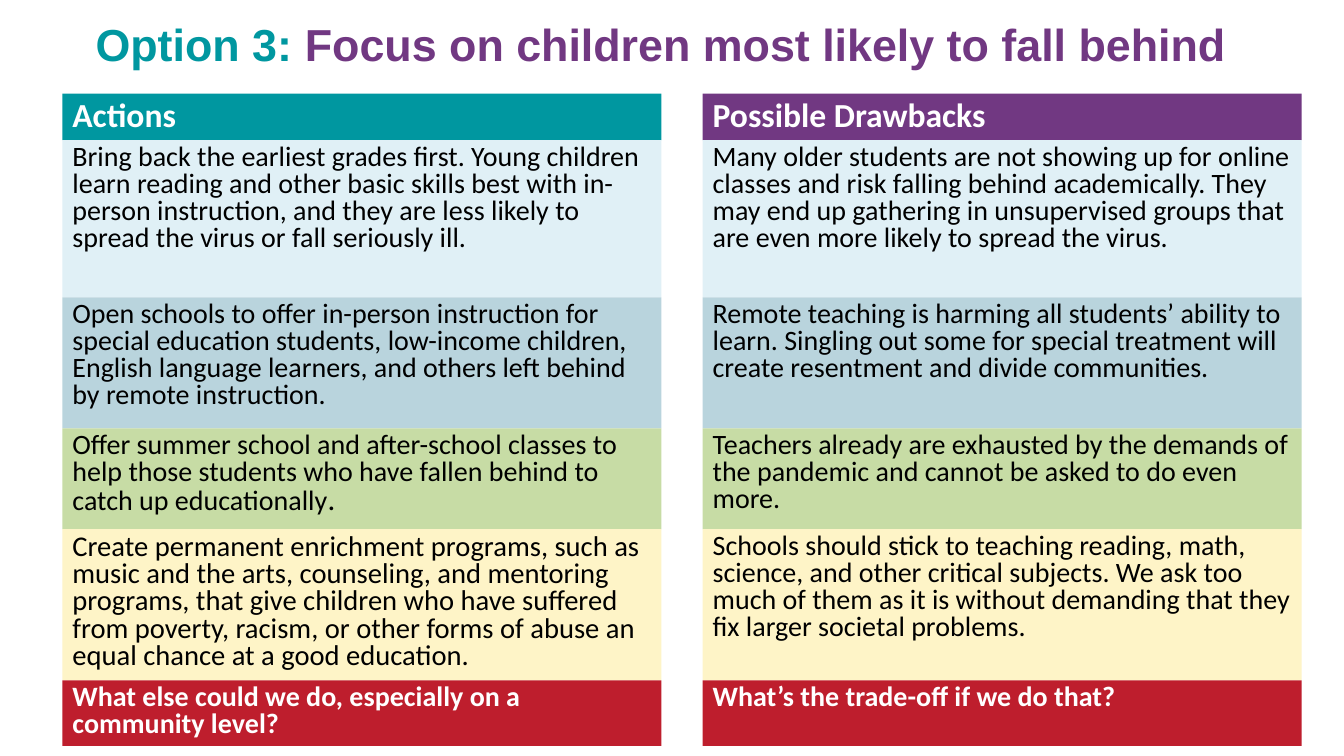
from pptx import Presentation
from pptx.dml.color import RGBColor
from pptx.enum.shapes import MSO_SHAPE as SHAPE
from pptx.enum.text import MSO_ANCHOR as ANCHOR, PP_ALIGN as ALIGN
from pptx.util import Inches, Pt

TEAL, PURPLE, BLACK, WHITE = "0097A0", "713882", "000000", "FFFFFF"
ROW_FILLS = ["E0F0F6", "B9D4DD", "C7DCA5", "FEF4C7", "BE1E2D"]
ROW_HEIGHTS = [1.56, 1.3, 1, 1.5, 0.65]
HEADER_HEIGHT = 0.46
COL_WIDTH, COL_GAP = 5.94, 0.41
LEFT, TOP = 0.62, 0.93

# Each column: heading, heading fill, then one list of (text, size) runs per row
COLUMNS = [
    ("Actions", TEAL, [
        [("Bring back the earliest grades first. Young children learn reading and "
          "other basic skills best with in-person instruction, and they are less "
          "likely to spread the virus or fall seriously ill.", 20)],
        [("Open schools to offer in-person instruction for special education "
          "students, low-income children, English language learners, and others "
          "left behind by remote instruction.", 20)],
        [("Offer summer school and after-school classes to help those students "
          "who have fallen behind to catch up educationally", 20), (".", 22)],
        [("Create permanent enrichment programs, such as music and the arts, "
          "counseling, and mentoring programs, that give children who have "
          "suffered from poverty, racism, or other forms of abuse an equal "
          "chance at a good education.", 20.4)],
        [("What else could we do, especially on a community level?", 20)],
    ]),
    ("Possible Drawbacks", PURPLE, [
        [("Many older students are not showing up for online classes and risk "
          "falling behind academically. They may end up gathering in unsupervised "
          "groups that are even more likely to spread the virus.", 20)],
        [("Remote teaching is harming all students’ ability to learn. Singling out "
          "some for special treatment will create resentment and divide "
          "communities.", 20)],
        [("Teachers already are exhausted by the demands of the pandemic and "
          "cannot be asked to do even more.", 20)],
        [("Schools should stick to teaching reading, math, science, and other "
          "critical subjects. We ask too much of them as it is without demanding "
          "that they fix larger societal problems.", 20)],
        [("What’s the trade-off if we do that?", 20)],
    ]),
]


def color(value):
    return RGBColor.from_string(value)


def add_run(p, text, size, font, hue, bold):
    r = p.add_run()
    r.text = text
    r.font.size, r.font.name, r.font.bold = Pt(size), font, bold
    r.font.color.rgb = color(hue)


def add_title(s, x, y, w, h):
    tf = s.shapes.add_textbox(*map(Inches, (x, y, w, h))).text_frame
    tf.word_wrap = True
    tf.vertical_anchor = ANCHOR.MIDDLE
    p = tf.paragraphs[0]
    p.alignment, p.line_spacing = ALIGN.CENTER, 0.9
    add_run(p, "Option 3: ", 32, "Arial", TEAL, True)
    add_run(p, "Focus on children most likely to fall behind", 32, "Arial", PURPLE, True)


def add_cell(s, x, y, w, h, fill, runs, hue=BLACK, bold=False,
             anchor=ANCHOR.TOP, spacing=0.8):
    sp = s.shapes.add_shape(SHAPE.RECTANGLE, *map(Inches, (x, y, w, h)))
    sp.shadow.inherit = False
    sp.fill.solid()
    sp.fill.fore_color.rgb = color(fill)
    sp.line.fill.background()
    tf = sp.text_frame
    tf.word_wrap = True
    tf.vertical_anchor = anchor
    p = tf.paragraphs[0]
    p.alignment, p.line_spacing = ALIGN.LEFT, spacing
    for text, size in runs:
        add_run(p, text, size, "Calibri", hue, bold)


def add_column(s, x, y, w, heading, fill, rows):
    add_cell(s, x, y, w, HEADER_HEIGHT, fill, [(heading, 24)], WHITE, True,
             ANCHOR.BOTTOM, 0.9)
    y += HEADER_HEIGHT
    for runs, row_fill, h in zip(rows, ROW_FILLS, ROW_HEIGHTS):
        closing = row_fill == ROW_FILLS[-1]
        add_cell(s, x, y, w, h, row_fill, runs, WHITE if closing else BLACK, closing)
        y += h


def main():
    prs = Presentation()
    prs.slide_width, prs.slide_height = Inches(13.33), Inches(7.5)
    s = prs.slides.add_slide(prs.slide_layouts[6])
    add_title(s, 0.81, 0.12, 11.5, 0.7)
    # Actions on the left, drawbacks on the right
    for i, column in enumerate(COLUMNS):
        add_column(s, LEFT + i * (COL_WIDTH + COL_GAP), TOP, COL_WIDTH, *column)
    prs.save("out.pptx")


if __name__ == "__main__":
    main()
